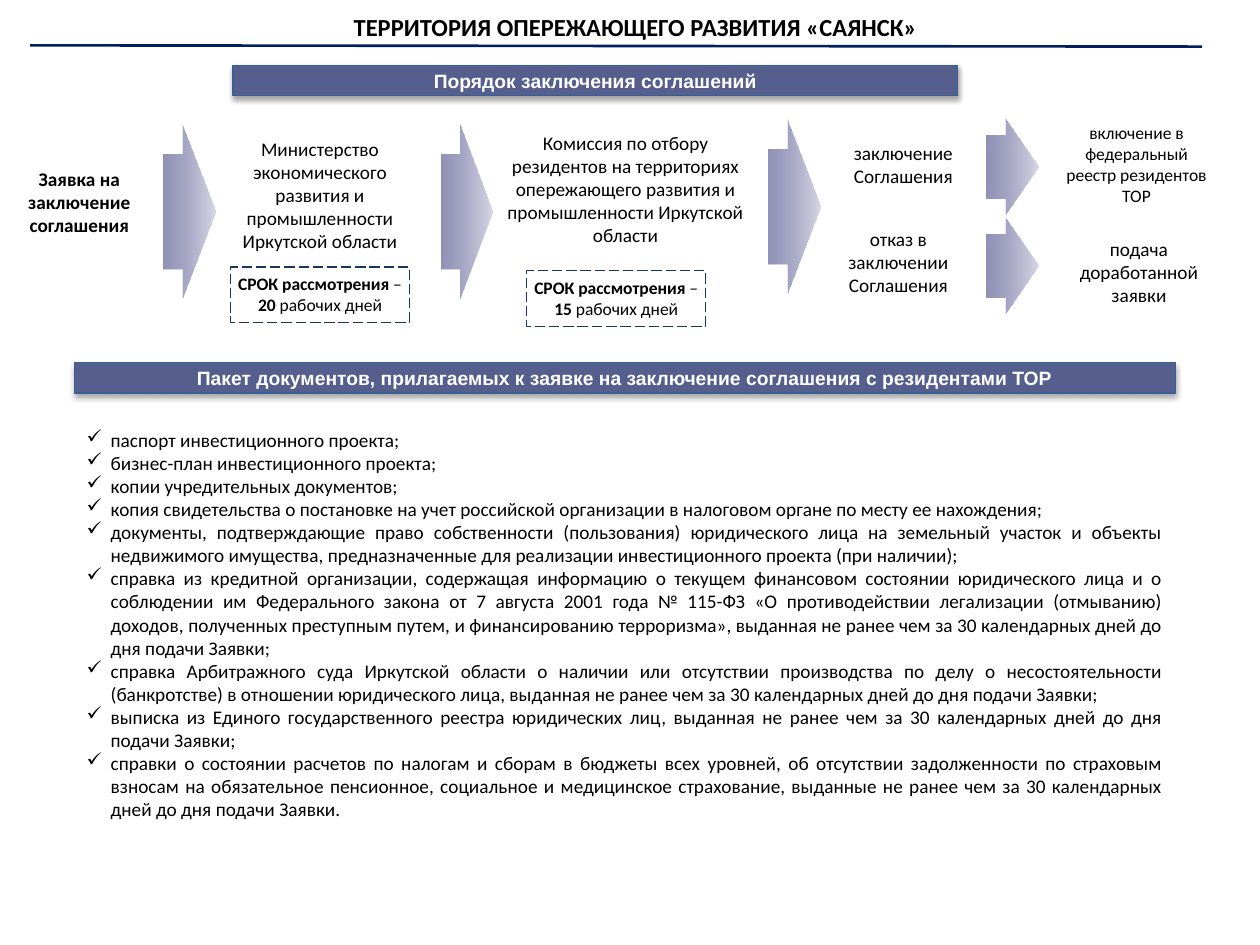
import dataclasses
import typing

import lxml.etree
import pptx
import pptx.dml.color
import pptx.enum.dml
import pptx.enum.shapes
import pptx.enum.text
import pptx.oxml.ns
import pptx.util

HUES = {
    "ink": "000000", "white": "FFFFFF", "rule": "002060", "bar": "555E8D",
    "edge": "376092", "dash": "17375E", "dark": "24246E", "pale": "C7C7DC",
}
COLS, ROWS = 100, 75
FORM = pptx.enum.shapes.MSO_SHAPE
SIDE = pptx.enum.text.PP_ALIGN
HOLD = pptx.enum.text.MSO_ANCHOR
SIZE = pptx.enum.text.MSO_AUTO_SIZE

deck = pptx.Presentation()
deck.slide_width = pptx.util.Inches(10)
deck.slide_height = pptx.util.Inches(7.5)
slide = deck.slides.add_slide(deck.slide_layouts[6])


class Area(typing.NamedTuple):
    col: float
    row: float
    wide: float
    high: float


@dataclasses.dataclass
class Label:
    area: Area
    lines: list[str]
    size: float = 11
    face: str = "Calibri"
    hue: str = "ink"
    side: SIDE = SIDE.CENTER
    hold: HOLD = HOLD.TOP
    inset: float = 0.1
    wrap: bool = True
    fit: SIZE = SIZE.SHAPE_TO_FIT_TEXT
    mark: str = ""


def across(cols: float) -> int:
    return round(deck.slide_width * cols / COLS)


def down(rows: float) -> int:
    return round(deck.slide_height * rows / ROWS)


def place(area: Area) -> tuple[int, int, int, int]:
    return across(area.col), down(area.row), across(area.wide), down(area.high)


def tint(name: str) -> pptx.dml.color.RGBColor:
    return pptx.dml.color.RGBColor.from_string(HUES[name])


def apply(item: typing.Any, form: dict) -> None:
    for name, value in form.items():
        setattr(item, name, value)


def child(node: typing.Any, tag: str, **form: str) -> typing.Any:
    return lxml.etree.SubElement(node, pptx.oxml.ns.qn(tag), form)


def write(shape: typing.Any, label: Label) -> None:
    frame = shape.text_frame
    edge = pptx.util.Inches(label.inset)
    apply(frame, {
        "margin_left": edge, "margin_right": edge, "word_wrap": label.wrap,
        "margin_top": pptx.util.Inches(0.05), "margin_bottom": pptx.util.Inches(0.05),
        "vertical_anchor": label.hold, "auto_size": label.fit,
    })
    for spot, line in enumerate(label.lines):
        para = frame.add_paragraph() if spot else frame.paragraphs[0]
        para.alignment = label.side
        if label.mark:
            props = para._p.get_or_add_pPr()
            hang = pptx.util.Inches(0.19)
            props.set("marL", str(hang))
            props.set("indent", str(-hang))
            child(props, "a:buChar", char=label.mark)
        for turn, part in enumerate(line.split("*")):
            if part:
                run = para.add_run()
                run.text = part
                apply(run.font, {
                    "size": pptx.util.Pt(label.size), "name": label.face,
                    "bold": turn % 2 == 1,
                })
                run.font.color.rgb = tint(label.hue)


def text(label: Label) -> None:
    write(slide.shapes.add_textbox(*place(label.area)), label)


def block(form: FORM, area: Area) -> typing.Any:
    shape = slide.shapes.add_shape(form, *place(area))
    shape.shadow.inherit = False
    return shape


def edge(shape: typing.Any, hue: str) -> None:
    shape.line.color.rgb = tint(hue)
    shape.line.width = pptx.util.Pt(0.75)


def banner(area: Area, line: str) -> None:
    shape = block(FORM.RECTANGLE, area)
    shape.fill.solid()
    shape.fill.fore_color.rgb = tint("bar")
    edge(shape, "edge")
    glow = shape._element.spPr.find(pptx.oxml.ns.qn("a:effectLst"))
    cast = child(glow, "a:outerShdw", blurRad=str(pptx.util.Pt(3.1)),
                 dist=str(pptx.util.Pt(1.8)), dir="5400000", rotWithShape="0")
    child(child(cast, "a:srgbClr", val=HUES["ink"]), "a:alpha", val="35000")
    write(shape, Label(area, [f"*{line}*"], face="Arial", hue="white",
                       hold=HOLD.MIDDLE, wrap=False, fit=SIZE.NONE))


def term(col: float, row: float, days: int) -> None:
    area = Area(col, row, 14.2, 4.4)
    shape = block(FORM.RECTANGLE, area)
    shape.fill.background()
    edge(shape, "dash")
    shape.line.dash_style = pptx.enum.dml.MSO_LINE.LONG_DASH
    line = f"*СРОК рассмотрения *– *{days}* рабочих дней"
    write(shape, Label(area, [line], size=10, inset=0.04))


def arrow(col: float, row: float, high: float) -> None:
    shape = block(FORM.RIGHT_ARROW, Area(col, row, 4.1, high))
    shape.adjustments[0], shape.adjustments[1] = 0.657, 0.634
    shape.line.fill.background()
    shape.fill.gradient()
    shape.fill.gradient_angle = 0
    for stop, hue in zip(shape.fill.gradient_stops, ("dark", "pale")):
        stop.color.rgb = tint(hue)
    tones = shape._element.spPr.iter(pptx.oxml.ns.qn("a:srgbClr"))
    for tone, alpha in zip(list(tones), ("50000", "71000")):
        child(tone, "a:alpha", val=alpha)


PAPERS = [
    "паспорт инвестиционного проекта;",
    "бизнес-план инвестиционного проекта;",
    "копии учредительных документов;",
    "копия свидетельства о постановке на учет российской организации в налоговом органе по месту ее нахождения;",
    "документы, подтверждающие право собственности (пользования) юридического лица на земельный участок и объекты недвижимого имущества, предназначенные для реализации инвестиционного проекта (при наличии);",
    "справка из кредитной организации, содержащая информацию о текущем финансовом состоянии юридического лица и о соблюдении им Федерального закона от 7 августа 2001 года № 115-ФЗ «О противодействии легализации (отмыванию) доходов, полученных преступным путем, и финансированию терроризма», выданная не ранее чем за 30 календарных дней до дня подачи Заявки;",
    "справка Арбитражного суда Иркутской области о наличии или отсутствии производства по делу о несостоятельности (банкротстве) в отношении юридического лица, выданная не ранее чем за 30 календарных дней до дня подачи Заявки;",
    "выписка из Единого государственного реестра юридических лиц, выданная не ранее чем за 30 календарных дней до дня подачи Заявки;",
    "справки о состоянии расчетов по налогам и сборам в бюджеты всех уровней, об отсутствии задолженности по страховым взносам на обязательное пенсионное, социальное и медицинское страхование, выданные не ранее чем за 30 календарных дней до дня подачи Заявки.",
]
LABELS = [
    Label(Area(2.8, 0.5, 95.3, 3.4), ["*ТЕРРИТОРИЯ ОПЕРЕЖАЮЩЕГО РАЗВИТИЯ «САЯНСК»*"], size=14),
    Label(Area(-1.2, 12.8, 15, 6.6), ["*Заявка на заключение соглашения*"], inset=0.04),
    Label(Area(18.3, 10.4, 14.2, 10.3),
          ["Министерство экономического развития и промышленности Иркутской области"], inset=0.04),
    Label(Area(39, 9.9, 21.3, 10.3),
          ["Комиссия по отбору резидентов на территориях опережающего развития и промышленности Иркутской области"]),
    Label(Area(83.9, 9.2, 12.6, 7.7),
          ["включение в федеральный реестр резидентов ТОР"], size=10, inset=0.04),
    Label(Area(64.2, 10.7, 15, 4.7), ["заключение Соглашения"], hold=HOLD.MIDDLE),
    Label(Area(64.2, 17.5, 14.2, 6.6), ["отказ в заключении Соглашения"], hold=HOLD.MIDDLE),
    Label(Area(83.9, 18.3, 13, 6.6), ["подача доработанной заявки"], hold=HOLD.MIDDLE),
    Label(Area(5.9, 33.3, 87.4, 32.5), PAPERS, side=SIDE.JUSTIFY, hold=HOLD.MIDDLE, mark="✓"),
]
ARROWS = [(13, 9.9, 13.8), (35, 9.9, 13.8), (61, 9.5, 13.8), (78.3, 9.4, 7.6), (78.3, 17.3, 7.6)]

rule = slide.shapes.add_connector(
    pptx.enum.shapes.MSO_CONNECTOR.STRAIGHT,
    across(2.4), down(3.6), across(95.4), down(3.7))
rule.line.color.rgb = tint("rule")
rule.line.width = pptx.util.Pt(1.5)
child(rule._element.spPr, "a:effectLst")

banner(Area(18.5, 5.2, 57.5, 2.4), "Порядок заключения соглашений")
banner(Area(5.9, 28.8, 87.4, 2.4),
       "Пакет документов, прилагаемых к заявке на заключение соглашения с резидентами ТОР")
for spot in ARROWS:
    arrow(*spot)
term(18.3, 21.2, 20)
term(41.8, 21.5, 15)
for label in LABELS:
    text(label)

deck.save("out.pptx")
